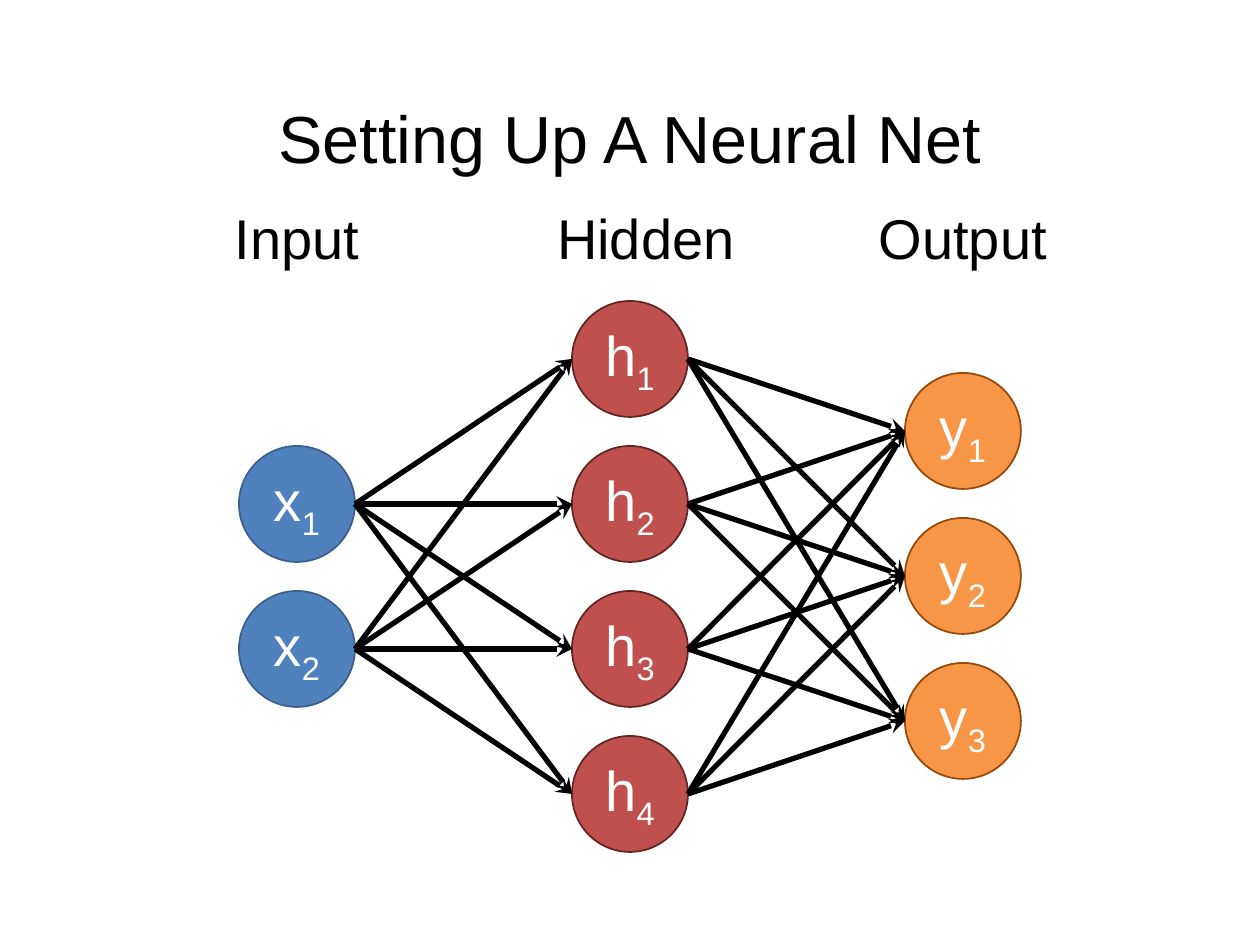
from dataclasses import dataclass
from itertools import pairwise, product

from lxml.etree import SubElement
from pptx import Presentation
from pptx.dml.color import RGBColor
from pptx.enum.shapes import MSO_CONNECTOR as Connector, MSO_SHAPE as Shape
from pptx.enum.text import MSO_ANCHOR as Anchor, PP_ALIGN as Align
from pptx.oxml.ns import qn
from pptx.util import Emu, Pt

EMU_PER_PX = 914400 // 126
BLACK = RGBColor(0x00, 0x00, 0x00)
WHITE = RGBColor(0xFF, 0xFF, 0xFF)
BLUE, DARK_BLUE = RGBColor(0x4F, 0x81, 0xBD), RGBColor(0x3A, 0x5F, 0x8C)
RED, DARK_RED = RGBColor(0xC0, 0x50, 0x4D), RGBColor(0x63, 0x25, 0x23)
ORANGE, DARK_ORANGE = RGBColor(0xF7, 0x96, 0x46), RGBColor(0x98, 0x48, 0x07)

NODE_SIZE = 116
NODE_PITCH = 145
LAYER_LEFT, LAYER_PITCH = 239, 333
NETWORK_MIDDLE = 576
LABEL_TOP, LABEL_WIDTH, LABEL_HEIGHT = 197, 228, 81


@dataclass(frozen=True)
class Layer:
    index: int
    label: str
    label_left: int
    symbol: str
    count: int
    fill: RGBColor
    outline: RGBColor

    @property
    def left(self) -> int:
        return LAYER_LEFT + self.index * LAYER_PITCH

    @property
    def tops(self) -> list[int]:
        """Node tops, with the column centred on the network's middle."""
        height = (self.count - 1) * NODE_PITCH + NODE_SIZE
        first = NETWORK_MIDDLE - height // 2
        return [first + row * NODE_PITCH for row in range(self.count)]


LAYERS = [
    Layer(0, "Input", 183, "x", 2, BLUE, DARK_BLUE),
    Layer(1, "Hidden", 532, "h", 4, RED, DARK_RED),
    Layer(2, "Output", 849, "y", 3, ORANGE, DARK_ORANGE),
]


def px(*lengths: int) -> list[Emu]:
    return [Emu(length * EMU_PER_PX) for length in lengths]


def add_run(paragraph, text: str, size: int, color: RGBColor):
    run = paragraph.add_run()
    run.text = text
    for name, value in {"name": "Arial", "size": Pt(size)}.items():
        setattr(run.font, name, value)
    run.font.color.rgb = color
    return run


def add_text(slide, box: tuple[int, int, int, int], text: str, size: int,
             anchor: Anchor = Anchor.TOP, line_spacing: float = 1.0) -> None:
    frame = slide.shapes.add_textbox(*px(*box)).text_frame
    for name, value in {"word_wrap": True, "vertical_anchor": anchor}.items():
        setattr(frame, name, value)
    paragraph = frame.paragraphs[0]
    for name, value in {"alignment": Align.CENTER, "line_spacing": line_spacing}.items():
        setattr(paragraph, name, value)
    add_run(paragraph, text, size, BLACK)


def add_node(slide, layer: Layer, top: int, number: int) -> None:
    shape = slide.shapes.add_shape(Shape.OVAL, *px(layer.left, top, NODE_SIZE, NODE_SIZE))
    shape.shadow.inherit = False
    shape.fill.solid()
    shape.fill.fore_color.rgb = layer.fill
    shape.line.color.rgb = layer.outline
    shape.line.width = Pt(1)
    frame = shape.text_frame
    for name, value in {"word_wrap": False, "vertical_anchor": Anchor.MIDDLE}.items():
        setattr(frame, name, value)
    paragraph = frame.paragraphs[0]
    paragraph.alignment = Align.CENTER
    add_run(paragraph, layer.symbol, 32, WHITE)
    subscript = add_run(paragraph, str(number), 32, WHITE)
    subscript.font._element.set("baseline", "-25000")


def add_arrow(slide, start: tuple[int, int], end: tuple[int, int]) -> None:
    arrow = slide.shapes.add_connector(Connector.STRAIGHT, *px(*start, *end))
    arrow.line.color.rgb = BLACK
    arrow.line.width = Pt(3)
    SubElement(arrow.line._get_or_add_ln(), qn("a:tailEnd"), type="stealth")
    SubElement(arrow._element.spPr, qn("a:effectLst"))


def connect_layers(slide, source: Layer, target: Layer) -> None:
    """Link every source node's right edge to every target node's left edge."""
    radius = NODE_SIZE // 2
    for source_top, target_top in product(source.tops, target.tops):
        add_arrow(slide, (source.left + NODE_SIZE, source_top + radius),
                  (target.left, target_top + radius))


def main() -> None:
    presentation = Presentation()
    presentation.slide_width, presentation.slide_height = px(1260, 945)
    slide = presentation.slides.add_slide(presentation.slide_layouts[6])

    add_text(slide, (87, 50, 1086, 183), "Setting Up A Neural Net", 38, Anchor.MIDDLE, 0.9)
    for layer in LAYERS:
        for number, top in enumerate(layer.tops, start=1):
            add_node(slide, layer, top, number)
    for source, target in pairwise(LAYERS):
        connect_layers(slide, source, target)
    for layer in LAYERS:
        add_text(slide, (layer.label_left, LABEL_TOP, LABEL_WIDTH, LABEL_HEIGHT),
                 layer.label, 32)

    presentation.save("out.pptx")


if __name__ == "__main__":
    main()
